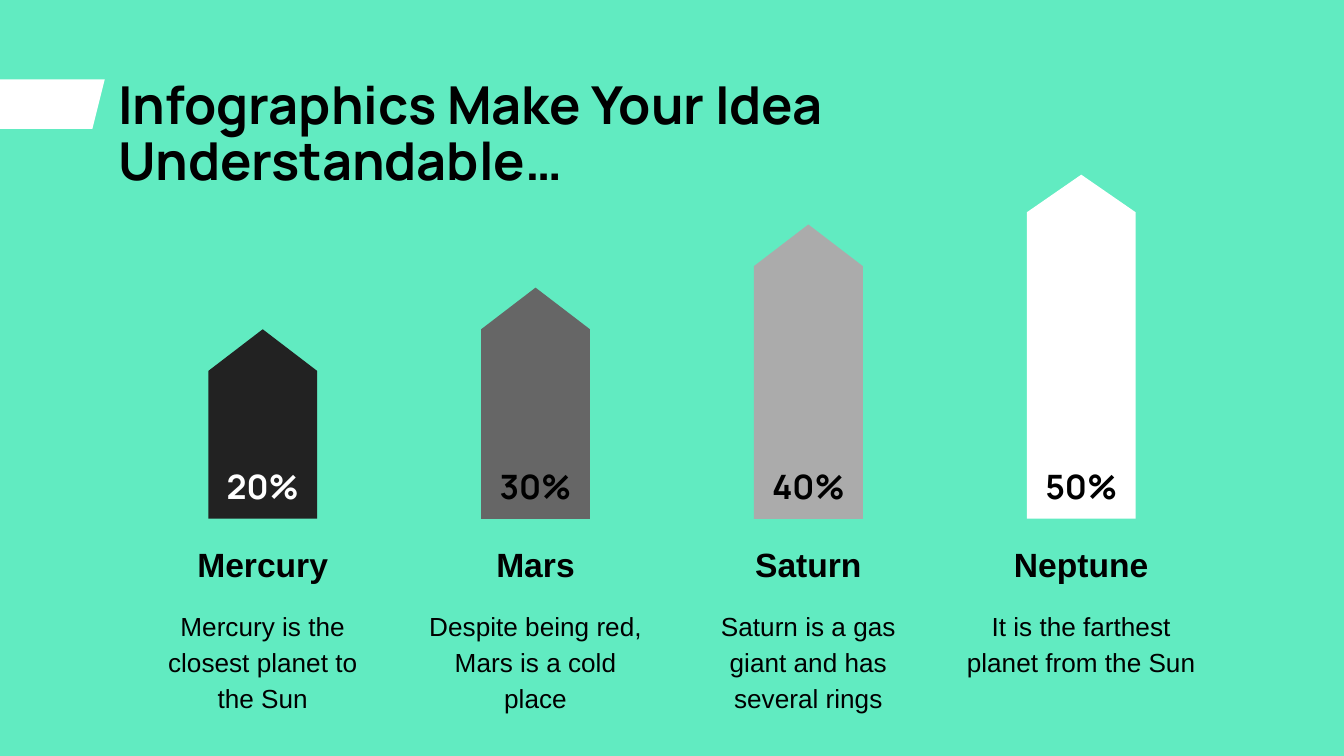
from dataclasses import dataclass

from pptx import Presentation
from pptx.dml.color import RGBColor
from pptx.enum.shapes import MSO_SHAPE
from pptx.enum.text import MSO_ANCHOR, MSO_AUTO_SIZE, PP_ALIGN
from pptx.shapes.base import BaseShape
from pptx.slide import Slide
from pptx.util import Pt

SLANT = MSO_SHAPE.PARALLELOGRAM
TOP, MIDDLE = MSO_ANCHOR.TOP, MSO_ANCHOR.MIDDLE
LEFT, CENTER = PP_ALIGN.LEFT, PP_ALIGN.CENTER
NO_FIT = MSO_AUTO_SIZE.NONE

SCALE = 4572  # EMU in one px, at 200 px to the inch
START, PITCH, COL_W = 201, 406, 380
BAR_W, BASE = 162, 772


@dataclass(frozen=True)
class Theme:
    back: str = "61EBC1"
    ink: str = "000000"
    light: str = "FFFFFF"
    head: str = "Manrope"
    body: str = "Arial"
    title: int = 28
    label: int = 18
    note: int = 14


@dataclass(frozen=True)
class Box:
    x: int
    y: int
    w: int
    h: int


@dataclass(frozen=True)
class Style:
    font: str
    size: int
    color: str
    bold: bool = True
    align: PP_ALIGN = CENTER
    anchor: MSO_ANCHOR = MIDDLE
    inset: int = 20
    lines: float = 1.0


@dataclass(frozen=True)
class Planet:
    name: str
    note: str
    share: str
    top: int
    tip: int
    fill: str
    ink: str


THEME = Theme()
TITLE = Style(THEME.head, THEME.title, THEME.ink, align=LEFT, anchor=TOP, lines=0.9)
NAME = Style(THEME.body, THEME.label, THEME.ink, inset=50)
NOTE = Style(THEME.body, THEME.note, THEME.ink, bold=False, anchor=TOP, lines=1.15)

PLANETS = [
    Planet("Mercury", "Mercury is the closest planet to the Sun", "20%",
           490, 62, "222222", THEME.light),
    Planet("Mars", "Despite being red, Mars is a cold place", "30%",
           428, 62, "666666", THEME.ink),
    Planet("Saturn", "Saturn is a gas giant and has several rings", "40%",
           334, 62, "ABABAB", THEME.ink),
    Planet("Neptune", "It is the farthest planet from the Sun", "50%",
           260, 56, THEME.light, THEME.ink),
]


def px(n: int) -> int:
    return n * SCALE


def place(shape: BaseShape, box: Box) -> None:
    spots = {"left": box.x, "top": box.y, "width": box.w, "height": box.h}
    for key, value in spots.items():
        setattr(shape, key, px(value))


def write(shape: BaseShape, text: str, style: Style) -> None:
    frame = shape.text_frame
    frame.text = text
    para = frame.paragraphs[0]
    font = para.runs[0].font
    sides = ("left", "top", "right", "bottom")
    formats = {
        frame: {"word_wrap": True, "auto_size": NO_FIT,
                "vertical_anchor": style.anchor,
                **{f"margin_{side}": px(style.inset) for side in sides}},
        para: {"alignment": style.align, "line_spacing": style.lines},
        font: {"name": style.font, "size": Pt(style.size), "bold": style.bold},
    }
    for item, values in formats.items():
        for key, value in values.items():
            setattr(item, key, value)
    font.color.rgb = RGBColor.from_string(style.color)


def label(slide: Slide, box: Box, text: str, style: Style) -> None:
    shape = slide.shapes.add_textbox(0, 0, 0, 0)
    place(shape, box)
    write(shape, text, style)


def paint(shape: BaseShape, color: str) -> None:
    shape.shadow.inherit = False
    shape.fill.solid()
    shape.fill.fore_color.rgb = RGBColor.from_string(color)
    shape.line.fill.background()


def bar(slide: Slide, x: int, planet: Planet) -> None:
    """Draw an upright bar with a pointed top."""
    right, neck = x + BAR_W, planet.top + planet.tip
    path = slide.shapes.build_freeform(right, neck, scale=SCALE)
    path.add_line_segments(
        [(x + BAR_W // 2, planet.top), (x, neck), (x, BASE), (right, BASE)])
    paint(path.convert_to_shape(), planet.fill)


def column(slide: Slide, x: int, planet: Planet) -> None:
    edge = x + (COL_W - BAR_W) // 2
    bar(slide, edge, planet)
    share = Style(THEME.head, THEME.label, planet.ink)
    label(slide, Box(edge, 688, BAR_W, 70), planet.share, share)
    label(slide, Box(x, 810, COL_W, 58), planet.name, NAME)
    label(slide, Box(x, 882, COL_W, 106), planet.note, NOTE)


def main() -> None:
    deck = Presentation()
    deck.slide_width, deck.slide_height = px(2000), px(1125)
    slide = deck.slides.add_slide(deck.slide_layouts[5])
    back = slide.background.fill
    back.solid()
    back.fore_color.rgb = RGBColor.from_string(THEME.back)

    tab = slide.shapes.add_shape(SLANT, 0, 0, 0, 0)
    place(tab, Box(-30, 118, 186, 74))
    paint(tab, THEME.light)

    title = slide.shapes.title
    place(title, Box(156, 98, 1688, 126))
    write(title, "Infographics Make Your Idea Understandable…", TITLE)

    for i, planet in enumerate(PLANETS):
        column(slide, START + i * PITCH, planet)
    deck.save("out.pptx")


if __name__ == "__main__":
    main()
